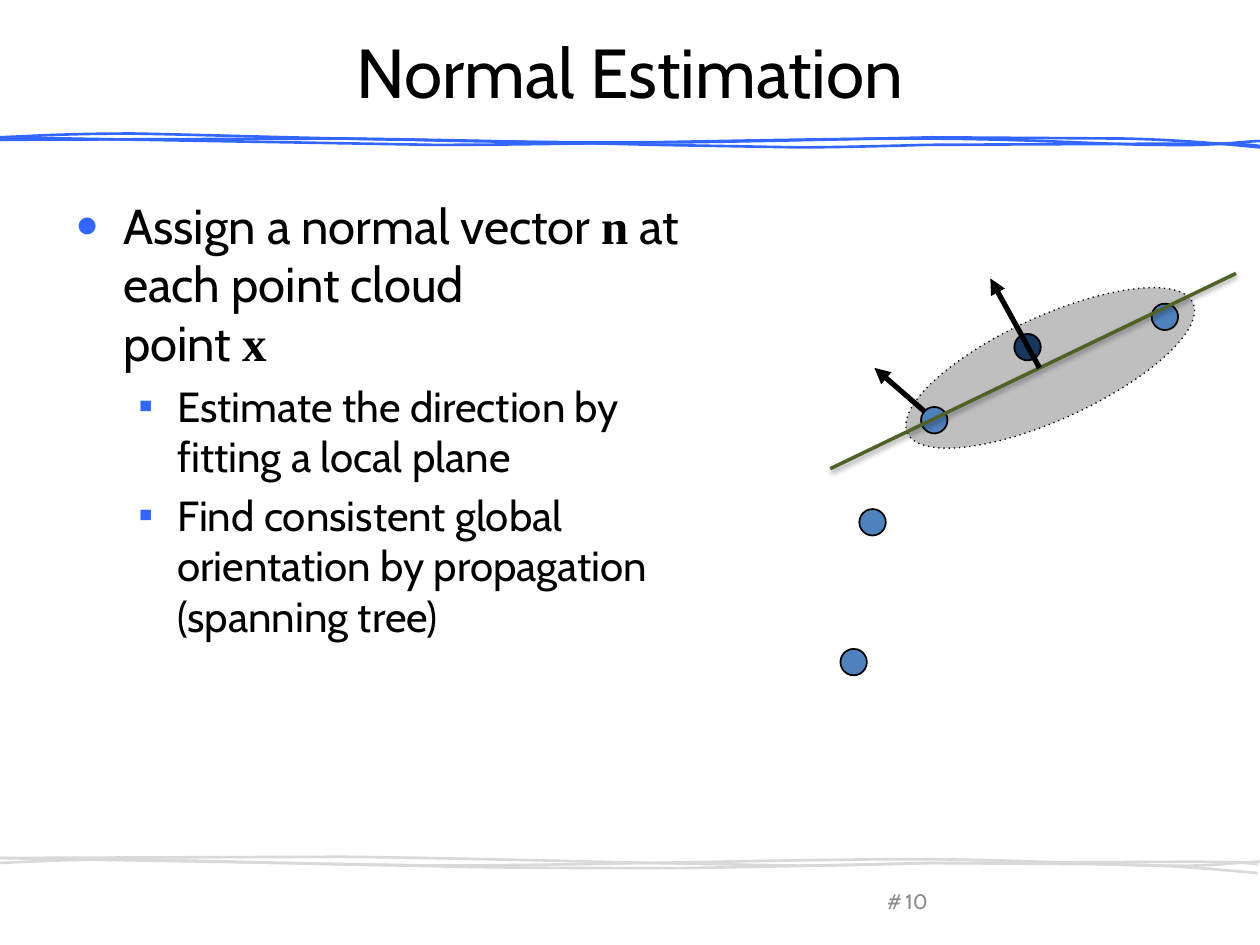
from dataclasses import dataclass
from lxml import etree
from pptx import Presentation, util as u
from pptx.dml.color import RGBColor
from pptx.enum import shapes, text
from pptx.oxml import ns

In = u.Inches


@dataclass(frozen=True)
class Theme:
    """Hold the colours, fonts and type sizes."""
    ink: str = "000000"
    rule: str = "3366FF"
    pale: str = "D9D9D9"
    mute: str = "8C8C8C"
    area: str = "BFBFBF"
    dot: str = "4F81BD"
    dark: str = "17375E"
    plane: str = "4F6228"
    font: str = "Cabin"
    math: str = "Times New Roman"
    head: float = 39.6
    main: int = 28
    sub: int = 24
    note: int = 12


T = Theme()

WAVES = [
    [(0, 1.09), [(3.45, 1.15)],
     [(4.66, 1.15), (6.28, 1.1), (7.24, 1.1)],
     [(8.2, 1.1), (8.77, 1.15), (9.23, 1.15)],
     [(9.69, 1.16), (9.88, 1.12), (10.01, 1.12)],
     [(10.14, 1.11), (10.07, 1.12), (10, 1.12)]],
    [(0, 1.09), [(0.27, 1.08), (0.53, 1.06), (1.07, 1.06)],
     [(1.62, 1.07), (2.53, 1.1), (3.26, 1.11)],
     [(3.98, 1.13), (4.75, 1.13), (5.44, 1.13)],
     [(6.13, 1.12), (7.41, 1.09), (7.41, 1.09)], [(8.93, 1.1)],
     [(9.36, 1.11), (9.69, 1.14), (10.01, 1.17)]],
    [(-0.01, 1.11), [(2.76, 1.1)],
     [(3.63, 1.11), (5.21, 1.15), (5.21, 1.15)], [(6.35, 1.17)],
     [(6.71, 1.17), (7.36, 1.15), (7.36, 1.15)], [(9.44, 1.14)],
     [(9.88, 1.14), (9.95, 1.15), (10.01, 1.16)]],
]


def tint(hue):
    """Turn a hex string into a colour."""
    return RGBColor.from_string(hue)


def node(up, tag, **keys):
    """Append a drawing element to a parent."""
    kid = etree.SubElement(up, ns.qn("a:" + tag))
    for key, val in keys.items():
        kid.set(key, str(val))
    return kid


def write(para, words, size=T.main, hue=T.ink, font=T.font, bold=False):
    """Add a formatted run to a paragraph."""
    run = para.add_run()
    run.text = words
    run.font.size, run.font.name, run.font.bold = u.Pt(size), font, bold
    run.font.color.rgb = tint(hue)


def stroke(line, hue, wide):
    """Set the colour and width of a line."""
    line.color.rgb = tint(hue)
    line.width = u.Pt(wide)


def frame(slide, box, anchor=text.MSO_ANCHOR.TOP):
    """Add a wrapping text box and return its frame."""
    area = slide.shapes.add_textbox(*map(In, box)).text_frame
    area.word_wrap = True
    area.vertical_anchor = anchor
    return area


def bend(form, parts):
    """Join the segments of each three-point part into a cubic curve."""
    way = next(form._element.iter(ns.qn("a:path")))
    legs = iter(list(way)[1:])
    for part in parts:
        curve = node(way, "lnTo" if len(part) == 1 else "cubicBezTo")
        for _ in part:
            leg = next(legs)
            curve.append(leg[0])
            way.remove(leg)


def waves(slide, left, drops, hue):
    """Draw the three wavy strokes of a rule."""
    for (pen, *parts), drop in zip(WAVES, drops):
        pts = [pen, *(pt for part in parts for pt in part)]
        pts = [(In(x + left), In(y + drop)) for x, y in pts]
        build = slide.shapes.build_freeform(*pts[0])
        build.add_line_segments(pts[1:], close=False)
        form = build.convert_to_shape()
        bend(form, parts)
        form.shadow.inherit = False
        form.fill.background()
        stroke(form.line, hue, 1.5)


def title(slide, box):
    """Place and fill the title."""
    name = slide.shapes.title
    name.left, name.top, name.width, name.height = map(In, box)
    area = name.text_frame
    area.vertical_anchor = text.MSO_ANCHOR.MIDDLE
    para = area.paragraphs[0]
    para.alignment = text.PP_ALIGN.CENTER
    write(para, "Normal Estimation", size=T.head)


def bullet(para, mark, edge, hang, size, scale=100):
    """Give a paragraph a coloured bullet and a hanging indent."""
    para.space_before = u.Pt(size * 0.2)
    prop = para._p.get_or_add_pPr()
    prop.set("marL", str(In(edge)))
    prop.set("indent", str(In(-hang)))
    node(node(prop, "buClr"), "srgbClr", val=T.rule)
    node(prop, "buSzPct", val=scale * 1000)
    node(prop, "buFont", typeface=T.math)
    node(prop, "buChar", char=mark)


def body(slide, box):
    """Write the bulleted text."""
    area = frame(slide, box)
    para = area.paragraphs[0]
    bullet(para, "●", 0.38, 0.38, T.main, 80)
    write(para, "Assign a normal vector ")
    write(para, "n", font=T.math, bold=True)
    write(para, " at each point cloud ")
    para.add_line_break()
    write(para, "point ")
    write(para, "x", font=T.math, bold=True)
    for words in ("Estimate the direction by fitting a local plane",
                  "Find consistent global orientation by propagation (spanning tree)"):
        para = area.add_paragraph()
        para.level = 1
        bullet(para, "▪", 0.81, 0.31, T.sub)
        write(para, words, size=T.sub)


def oval(slide, box, hue, wide=1):
    """Draw a filled ellipse with a dark outline."""
    form = slide.shapes.add_shape(shapes.MSO_SHAPE.OVAL, *map(In, box))
    form.shadow.inherit = False
    form.fill.solid()
    form.fill.fore_color.rgb = tint(hue)
    stroke(form.line, T.ink, wide)
    return form


def link(slide, ends, hue, wide, tip=False, shade=False):
    """Draw a straight line with an optional arrowhead or shadow."""
    kind = shapes.MSO_CONNECTOR.STRAIGHT
    line = slide.shapes.add_connector(kind, *map(In, ends))
    stroke(line.line, hue, wide)
    if tip:
        node(line.line._get_or_add_ln(), "headEnd", type="triangle")
    glow = node(line._element.spPr, "effectLst")
    if shade:
        cast = node(glow, "outerShdw", blurRad=u.Pt(3.1), dist=u.Pt(1.6),
                    dir=90 * 60000, rotWithShape=0)
        node(node(cast, "srgbClr", val=T.ink), "alpha", val=38000)


def cloud(slide, left, top):
    """Draw the point cloud with its fitted plane and normals."""
    def ends(x1, y1, x2, y2):
        return left + x1, top + y1, left + x2, top + y2

    area = oval(slide, (left + 0.59, top + 0.51, 2.49, 0.82), T.area, 0.75)
    area.rotation = 335.5
    node(area.line._get_or_add_ln(), "prstDash", val="dot")
    link(slide, ends(0.44, 0.92, 0.97, 1.38), T.ink, 3, tip=True)
    for x, y, hue in ((0.81, 1.23, T.dot), (1.55, 0.65, T.dark),
                      (0.17, 3.15, T.dot), (2.64, 0.41, T.dot),
                      (0.32, 2.04, T.dot)):
        oval(slide, (left + x, top + y, 0.21, 0.21), hue)
    link(slide, ends(0.09, 1.72, 3.31, 0.17), T.plane, 2, shade=True)
    link(slide, ends(1.36, 0.21, 1.75, 0.92), T.ink, 3, tip=True)


def footer(slide, left, top):
    """Write the slide number and its sign."""
    for words, box in (("#", (left, top + 0.05, 0.3, 0.3)),
                       ("10", (left, top, 0.65, 0.4))):
        area = frame(slide, box, text.MSO_ANCHOR.MIDDLE)
        area.margin_left = area.margin_right = 0
        para = area.paragraphs[0]
        para.alignment = text.PP_ALIGN.CENTER
        write(para, words, size=T.note, hue=T.mute)


def main():
    """Build and save the slide."""
    deck = Presentation()
    deck.slide_width, deck.slide_height = In(10), In(7.5)
    slide = deck.slides.add_slide(deck.slide_layouts[5])
    waves(slide, -0.01, (0, 0, 0), T.rule)
    waves(slide, -0.03, (5.72, 5.76, 5.7), T.pale)
    title(slide, (0.5, 0.3, 9, 0.53))
    body(slide, (0.5, 1.5, 5.1, 5))
    cloud(slide, 6.5, 2)
    footer(slide, 6.95, 6.95)
    deck.save("out.pptx")


if __name__ == "__main__":
    main()
